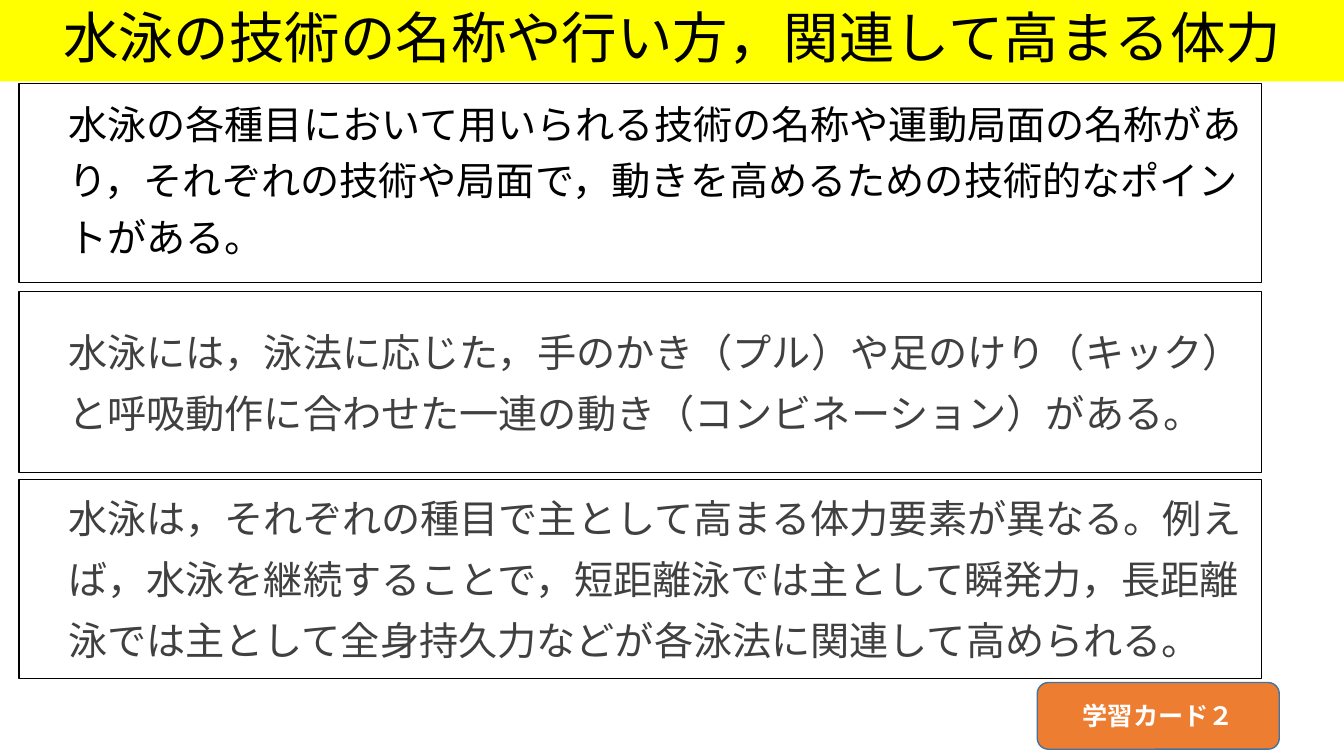
from pptx import Presentation
from pptx.dml.color import RGBColor
from pptx.enum.shapes import MSO_SHAPE as Shape
from pptx.enum.text import MSO_ANCHOR as Anchor, PP_ALIGN as Align
from pptx.oxml.ns import qn
from pptx.util import Cm, Pt

BLACK = RGBColor(0x00, 0x00, 0x00)
GRAY = RGBColor(0x40, 0x40, 0x40)
WHITE = RGBColor(0xFF, 0xFF, 0xFF)
YELLOW = RGBColor(0xFF, 0xFF, 0x00)
ORANGE = RGBColor(0xED, 0x7D, 0x31)
BLUE = RGBColor(0x43, 0x73, 0x9E)

CARDS = [  # top, height, colour, line spacing, lines
    (2.11, 5.0, BLACK, 0.9, [
        "水泳の各種目において用いられる技術の名称や運動局面の名称があ",
        "り，それぞれの技術や局面で，動きを高めるための技術的なポイン",
        "トがある。"]),
    (7.34, 4.57, GRAY, 1.0, [
        "水泳には，泳法に応じた，手のかき（プル）や足のけり（キック）",
        "と呼吸動作に合わせた一連の動き（コンビネーション）がある。"]),
    (12.09, 5.0, GRAY, 1.0, [
        "水泳は，それぞれの種目で主として高まる体力要素が異なる。例え",
        "ば，水泳を継続することで，短距離泳では主として瞬発力，長距離",
        "泳では主として全身持久力などが各泳法に関連して高められる。"]),
]


class Deck:
    font = "Noto Sans CJK JP"

    def __init__(self):
        self.prs = Presentation()
        self.prs.slide_width, self.prs.slide_height = Cm(33.87), Cm(19.05)
        self.slide = self.prs.slides.add_slide(self.prs.slide_layouts[6])

    def box(self, kind, at, fill=None, line=None, width=0.75):
        shape = self.slide.shapes.add_shape(kind, *map(Cm, at))
        shape.shadow.inherit = False
        for part, color in ((shape.fill, fill), (shape.line.fill, line)):
            if color is None:
                part.background()
            else:
                part.solid()
                part.fore_color.rgb = color
        if line is not None:
            shape.line.width = Pt(width)
        return shape

    def text(self, shape, lines, color, size, bold=False, inset=0.25, **style):
        frame = shape.text_frame
        frame.word_wrap = True
        frame.vertical_anchor = Anchor.MIDDLE
        frame.margin_left = Cm(inset)
        for i, line in enumerate(lines):
            para = frame.paragraphs[0] if i == 0 else frame.add_paragraph()
            for key, value in style.items():
                setattr(para, key, value)
            run = para.add_run()
            run.text = line
            look = {"name": self.font, "size": Pt(size), "bold": bold}
            for key, value in look.items():
                setattr(run.font, key, value)
            run.font.color.rgb = color
            props = run.font._element
            props.set("lang", "ja-JP")
            east = props.makeelement(qn("a:ea"), {"typeface": self.font})
            props.find(qn("a:latin")).addnext(east)

    def title(self, words):
        band = self.box(Shape.RECTANGLE, (0, 0, 33.87, 2.05), fill=YELLOW)
        self.text(band, [words], BLACK, 39.6,
                  alignment=Align.CENTER, line_spacing=0.9)

    def card(self, top, height, color, space, lines):
        frame = self.box(Shape.RECTANGLE, (0.48, top, 31.32, height), line=BLACK)
        self.text(frame, lines, color, 28, inset=1.24, alignment=Align.LEFT,
                  line_spacing=space, space_before=Pt(10))

    def badge(self, words):
        shape = self.box(Shape.ROUNDED_RECTANGLE, (26.14, 17.2, 6.1, 1.68),
                         ORANGE, BLUE, 1)
        self.text(shape, [words], WHITE, 18, bold=True, alignment=Align.CENTER)


def main():
    deck = Deck()
    deck.title("水泳の技術の名称や行い方，関連して高まる体力")
    for card in CARDS:
        deck.card(*card)
    deck.badge("学習カード２")
    deck.prs.save("out.pptx")


if __name__ == "__main__":
    main()
